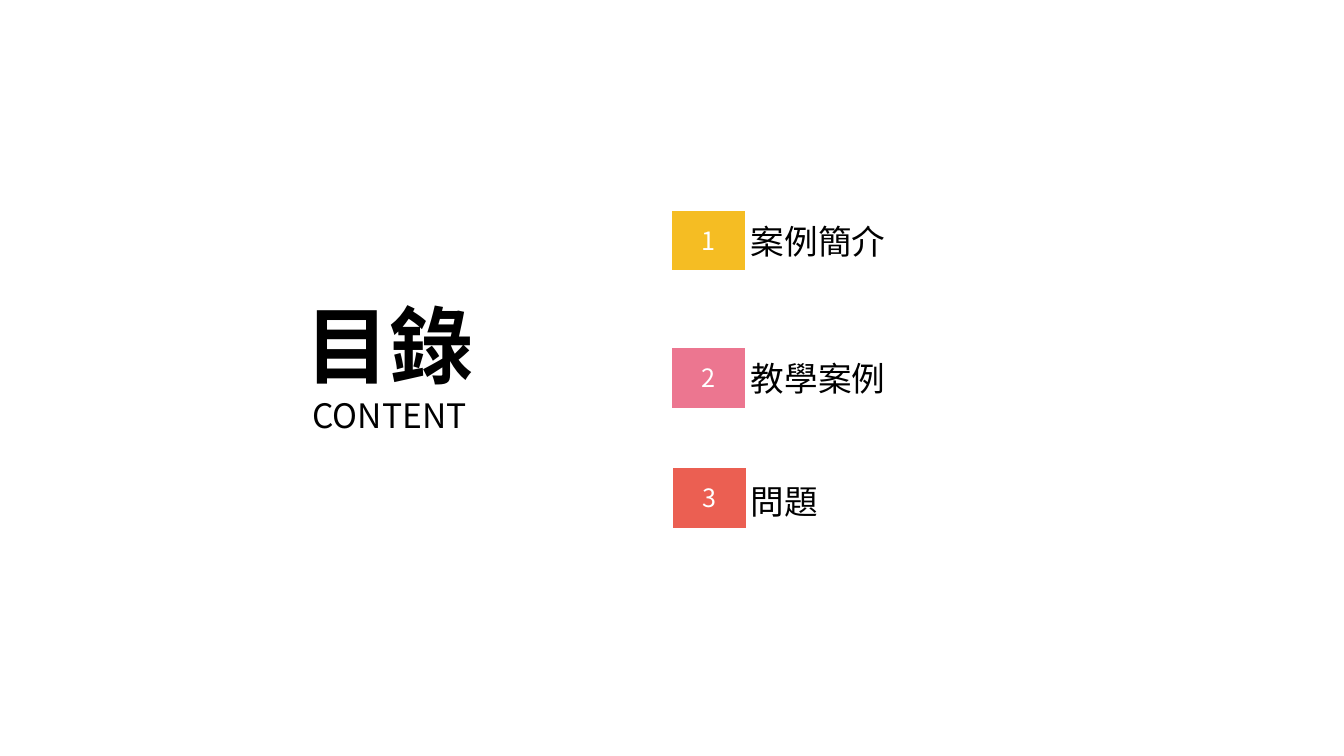
from dataclasses import dataclass

from lxml.etree import SubElement
from pptx import Presentation
from pptx.dml.color import RGBColor as RGB
from pptx.enum.shapes import MSO_SHAPE as Shape
from pptx.enum.text import MSO_ANCHOR as Anchor, PP_ALIGN as Align
from pptx.oxml.ns import qn
from pptx.util import Pt


@dataclass(frozen=True)
class Theme:
    """Colours, font and type sizes."""
    font: str = "Noto Sans CJK SC"
    white: str = "FFFFFF"
    black: str = "000000"
    yellow: str = "F5BD23"
    pink: str = "EC7690"
    red: str = "EB5F52"
    title: int = 60
    label: int = 24
    number: int = 18
    disc_alpha: int = 78


class Builder:
    """Draws elements on the current slide in one style."""

    def __init__(self, prs, theme):
        self.theme = theme
        self.s = prs.slides.add_slide(prs.slide_layouts[6])

    def set_text(self, tf, lines, align, color):
        """Fill a text frame with (text, size, bold) lines."""
        tf.word_wrap = True
        tf.vertical_anchor = Anchor.MIDDLE
        for i, (text, size, bold) in enumerate(lines):
            p = tf.add_paragraph() if i else tf.paragraphs[0]
            p.alignment = align
            r = p.add_run()
            r.text = text
            style = {"name": self.theme.font, "size": Pt(size), "bold": bold}
            for name, value in style.items():
                setattr(r.font, name, value)
            r.font.color.rgb = RGB.from_string(color)
            ea = SubElement(r._r.get_or_add_rPr(), qn("a:ea"))
            ea.set("typeface", self.theme.font)

    def shape(self, kind, box, fill, lines, color):
        """Add a filled shape without outline, with centred text."""
        sp = self.s.shapes.add_shape(kind, *map(Pt, box))
        sp.shadow.inherit = False
        sp.fill.solid()
        sp.fill.fore_color.rgb = RGB.from_string(fill)
        sp.line.fill.background()
        self.set_text(sp.text_frame, lines, Align.CENTER, color)
        return sp

    def badge(self, left, top, number, fill):
        """Add a numbered colour block."""
        t = self.theme
        sp = self.shape(Shape.PARALLELOGRAM, (left, top, 52.5, 42.6), fill,
                        [(str(number), t.number, False)], t.white)
        sp.adjustments[0] = 0

    def label(self, left, top, text):
        """Add the text beside a badge."""
        t = self.theme
        tf = self.s.shapes.add_textbox(*map(Pt, (left, top, 217.4, 54.7))).text_frame
        tf.margin_left = tf.margin_right = tf.margin_top = tf.margin_bottom = Pt(3.6)
        self.set_text(tf, [(text, t.label, False)], Align.LEFT, t.black)

    def disc(self, left, top, size, lines):
        """Add a translucent round title."""
        t = self.theme
        sp = self.shape(Shape.OVAL, (left, top, size, size), t.white, lines, t.black)
        clr = sp._element.spPr.find(f"{qn('a:solidFill')}/{qn('a:srgbClr')}")
        SubElement(clr, qn("a:alpha")).set("val", str(t.disc_alpha * 1000))


def main():
    """Build the contents slide."""
    prs = Presentation()
    prs.slide_width, prs.slide_height = Pt(960), Pt(540)
    t = Theme()
    b = Builder(prs, t)
    items = [
        ("案例簡介", t.yellow, 480, 150.6, 144.7),
        ("教學案例", t.pink, 480, 248.5, 242.6),
        ("問題", t.red, 480.6, 334.2, 330.5),
    ]
    for number, (text, fill, left, badge_top, label_top) in enumerate(items, 1):
        b.badge(left, badge_top, number, fill)
        b.label(532.8, label_top, text)
    b.disc(180.7, 162.7, 195.1,
           [("目錄", t.title, True), ("CONTENT", t.label, False)])
    prs.save("out.pptx")


if __name__ == "__main__":
    main()
